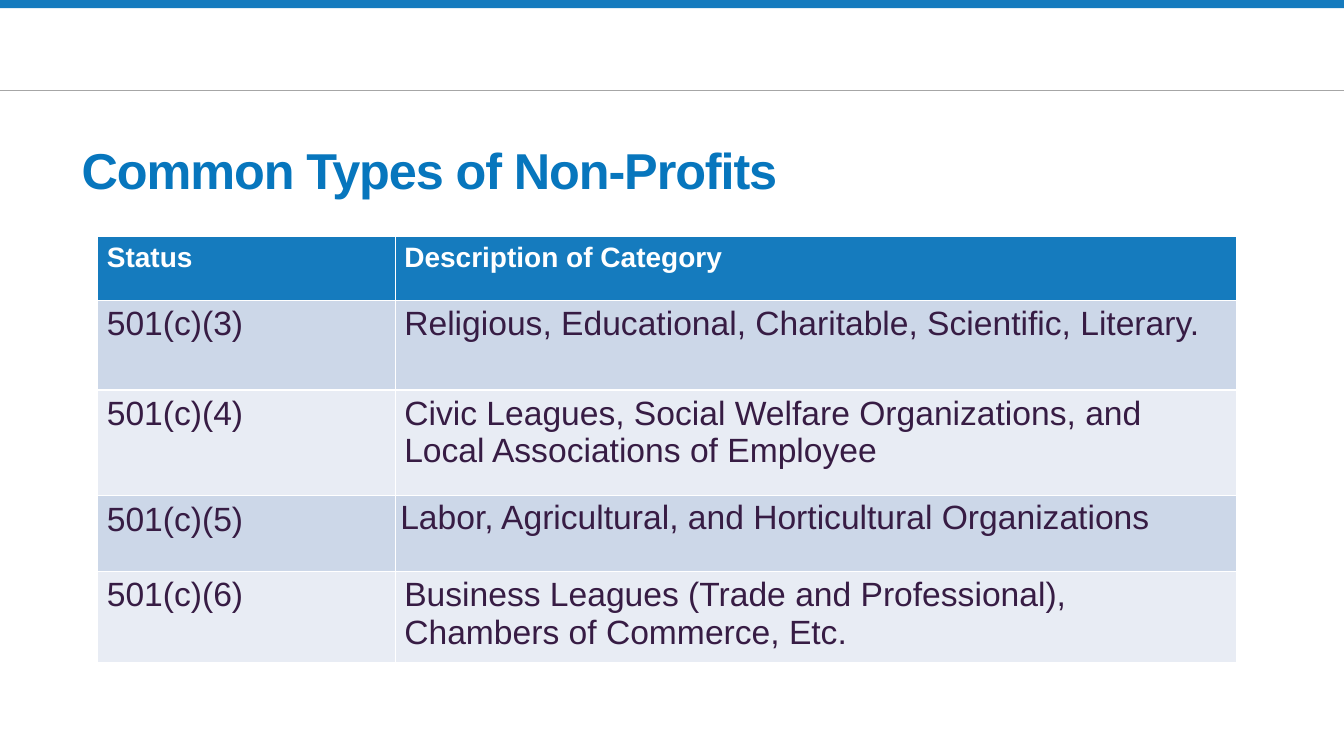
from lxml import etree
from pptx import Presentation
from pptx.dml.color import RGBColor
from pptx.enum.shapes import MSO_CONNECTOR, MSO_SHAPE
from pptx.enum.text import MSO_ANCHOR
from pptx.oxml.ns import qn
from pptx.util import Inches, Pt

TITLE = "Common Types of Non-Profits"
HEADINGS = ("Status", "Description of Category")
CATEGORIES = [
    ("501(c)(3)", "Religious, Educational, Charitable, Scientific, Literary."),
    ("501(c)(4)", "Civic Leagues, Social Welfare Organizations, and Local Associations of Employee"),
    ("501(c)(5)", "Labor, Agricultural, and Horticultural Organizations"),
    ("501(c)(6)", "Business Leagues (Trade and Professional), Chambers of Commerce, Etc."),
]
COLUMN_WIDTHS = (2.95, 8.34)
ROW_HEIGHTS = (0.63, 0.89, 1.05, 0.75, 0.89)
PADDING = (0.09, 0.05)
TIGHT_PADDING = (0.05, 0.03)
TIGHT_CELL = (3, 1)
SLIDE_WIDTH, SLIDE_HEIGHT = 13.33, 7.5

THEME = {
    "font": "Arial",
    "title": RGBColor.from_string("0776BD"),
    "accent": RGBColor.from_string("157BBE"),
    "rule": RGBColor.from_string("A6A6A6"),
    "heading": RGBColor.from_string("FFFFFF"),
    "body": RGBColor.from_string("371C44"),
    "bands": (RGBColor.from_string("CCD7E8"), RGBColor.from_string("E8ECF4")),
    "title_size": 36,
    "heading_size": 20,
    "body_size": 24,
}


def style(paragraph, size, color, bold):
    font = paragraph.font
    font.name = THEME["font"]
    font.size = Pt(size)
    font.bold = bold
    font.color.rgb = color


def pad(holder, padding):
    across, down = padding
    holder.margin_left = holder.margin_right = Inches(across)
    holder.margin_top = holder.margin_bottom = Inches(down)


def add_header_lines(slide):
    rule = slide.shapes.add_connector(
        MSO_CONNECTOR.STRAIGHT, 0, Inches(0.9), Inches(SLIDE_WIDTH), Inches(0.9))
    rule.line.color.rgb = THEME["rule"]
    rule.line.width = Pt(0.5)
    etree.SubElement(rule._element.spPr, qn("a:effectLst"))

    top_bar = slide.shapes.add_shape(
        MSO_SHAPE.RECTANGLE, 0, 0, Inches(SLIDE_WIDTH), Inches(0.08))
    top_bar.shadow.inherit = False
    top_bar.fill.solid()
    top_bar.fill.fore_color.rgb = THEME["accent"]
    top_bar.line.fill.background()


def add_title(slide):
    frame = slide.shapes.add_textbox(
        Inches(0.72), Inches(1.33), Inches(9.45), Inches(0.71)).text_frame
    frame.word_wrap = True
    pad(frame, PADDING)
    paragraph = frame.paragraphs[0]
    run = paragraph.add_run()
    run.text = TITLE
    run._r.get_or_add_rPr().set("spc", "-80")
    style(paragraph, THEME["title_size"], THEME["title"], True)


def add_categories(slide):
    rows = [HEADINGS, *CATEGORIES]
    table = slide.shapes.add_table(
        len(rows), len(HEADINGS), Inches(0.97), Inches(2.35),
        Inches(sum(COLUMN_WIDTHS)), Inches(sum(ROW_HEIGHTS))).table
    for column, width in zip(table.columns, COLUMN_WIDTHS):
        column.width = Inches(width)
    for r, (texts, height) in enumerate(zip(rows, ROW_HEIGHTS)):
        table.rows[r].height = Inches(height)
        is_heading = r == 0
        fill = THEME["accent"] if is_heading else THEME["bands"][(r - 1) % 2]
        kind = "heading" if is_heading else "body"
        for c, text in enumerate(texts):
            cell = table.cell(r, c)
            cell.text = text
            cell.vertical_anchor = MSO_ANCHOR.TOP
            pad(cell, TIGHT_PADDING if (r, c) == TIGHT_CELL else PADDING)
            cell.fill.solid()
            cell.fill.fore_color.rgb = fill
            style(cell.text_frame.paragraphs[0], THEME[f"{kind}_size"], THEME[kind], is_heading)


def main():
    deck = Presentation()
    deck.slide_width = Inches(SLIDE_WIDTH)
    deck.slide_height = Inches(SLIDE_HEIGHT)
    slide = deck.slides.add_slide(deck.slide_layouts[6])
    add_header_lines(slide)
    add_title(slide)
    add_categories(slide)
    deck.save("out.pptx")


if __name__ == "__main__":
    main()
